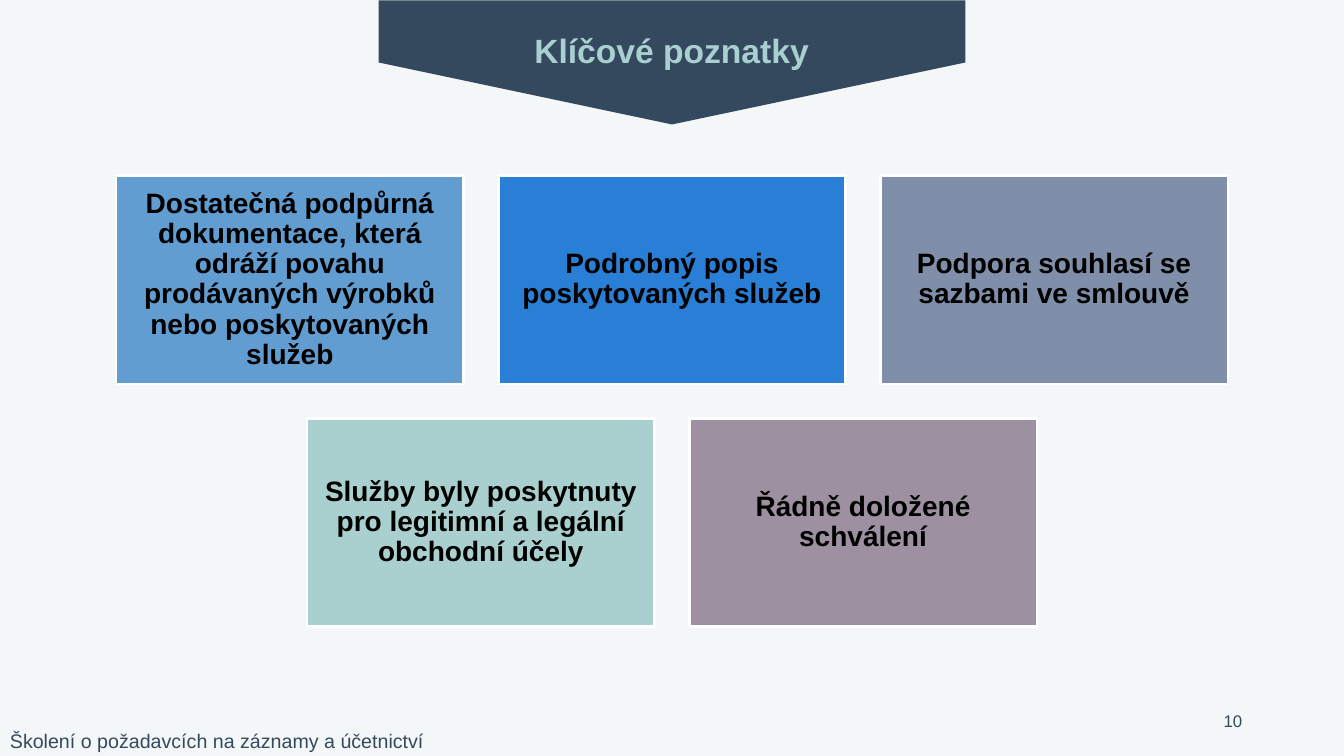
import dataclasses

import pptx
import pptx.dml.color
import pptx.enum.shapes
import pptx.enum.text
import pptx.util

Inches = pptx.util.Inches
Align = pptx.enum.text.PP_ALIGN
Anchor = pptx.enum.text.MSO_ANCHOR
Shape = pptx.enum.shapes.MSO_SHAPE

WIDTH, HEIGHT = 13.33, 7.5
CARD_W, CARD_H, GAP, TOP = 3.45, 2.07, 0.34, 1.74
COLORS = {
    "paper": "F4F7F7", "navy": "34495E", "mint": "AACFD0",
    "black": "000000", "white": "FFFFFF", "sky": "629DD1",
    "blue": "297FD5", "slate": "7F8FA9", "sage": "AACFCF", "mauve": "9D90A0",
}


@dataclasses.dataclass
class Label:
    text: str
    box: tuple[float, float, float, float]
    size: int
    color: str
    align: Align = Align.LEFT
    anchor: Anchor = Anchor.TOP
    bold: bool = False


@dataclasses.dataclass
class Card:
    text: str
    fill: str


LABELS = [
    Label("Školení o požadavcích na záznamy a účetnictví",
          (0, 7.18, 4.42, 0.34), 14, "navy"),
    Label("Klíčové poznatky", (2.97, 0.25, 7.38, 0.5), 24, "mint",
          Align.CENTER, bold=True),
    Label("10", (9.42, 6.95, 3, 0.4), 12, "navy", Align.RIGHT, Anchor.MIDDLE),
]
ROWS = [
    [Card("Dostatečná podpůrná dokumentace, která odráží povahu "
          "prodávaných výrobků nebo poskytovaných služeb", "sky"),
     Card("Podrobný popis poskytovaných služeb", "blue"),
     Card("Podpora souhlasí se sazbami ve smlouvě", "slate")],
    [Card("Služby byly poskytnuty pro legitimní a legální obchodní účely", "sage"),
     Card("Řádně doložené schválení", "mauve")],
]


def rgb(name: str) -> pptx.dml.color.RGBColor:
    return pptx.dml.color.RGBColor.from_string(COLORS[name])


def write(shape, label: Label):
    """Fill a shape with styled text and return its paragraph."""
    frame = shape.text_frame
    frame.text = label.text
    frame.word_wrap = True
    frame.vertical_anchor = label.anchor
    para = frame.paragraphs[0]
    para.alignment = label.align
    font = para.runs[0].font
    font.name, font.size, font.bold = "Arial", pptx.util.Pt(label.size), label.bold
    font.color.rgb = rgb(label.color)
    return para


def add_block(slide, kind: Shape, box: tuple, fill: str):
    shape = slide.shapes.add_shape(kind, *map(Inches, box))
    shape.shadow.inherit = False
    shape.fill.solid()
    shape.fill.fore_color.rgb = rgb(fill)
    shape.line.fill.background()
    return shape


def add_card(slide, card: Card, left: float, top: float) -> None:
    box = (left, top, CARD_W, CARD_H)
    shape = add_block(slide, Shape.RECTANGLE, box, card.fill)
    shape.line.color.rgb = rgb("white")
    shape.line.width = pptx.util.Pt(2)
    para = write(shape, Label(card.text, box, 20, "black", Align.CENTER,
                              Anchor.MIDDLE, True))
    para.line_spacing = 0.9
    frame = shape.text_frame
    frame.margin_left = frame.margin_right = Inches(0.08)
    frame.margin_top = frame.margin_bottom = Inches(0.08)


def main() -> None:
    deck = pptx.Presentation()
    deck.slide_width, deck.slide_height = Inches(WIDTH), Inches(HEIGHT)
    slide = deck.slides.add_slide(deck.slide_layouts[6])
    slide.background.fill.solid()
    slide.background.fill.fore_color.rgb = rgb("paper")

    # Title banner, pointing down
    banner = add_block(slide, Shape.PENTAGON, (6.05, -2.29, 1.23, 5.82), "navy")
    banner.rotation = 90

    # Footer, title and page number
    for label in LABELS:
        write(slide.shapes.add_textbox(*map(Inches, label.box)), label)

    # Cards, each row centred on the slide
    for row, cards in enumerate(ROWS):
        span = len(cards) * (CARD_W + GAP) - GAP
        for col, card in enumerate(cards):
            left = (WIDTH - span) / 2 + col * (CARD_W + GAP)
            add_card(slide, card, left, TOP + row * (CARD_H + GAP))

    deck.save("out.pptx")


if __name__ == "__main__":
    main()
